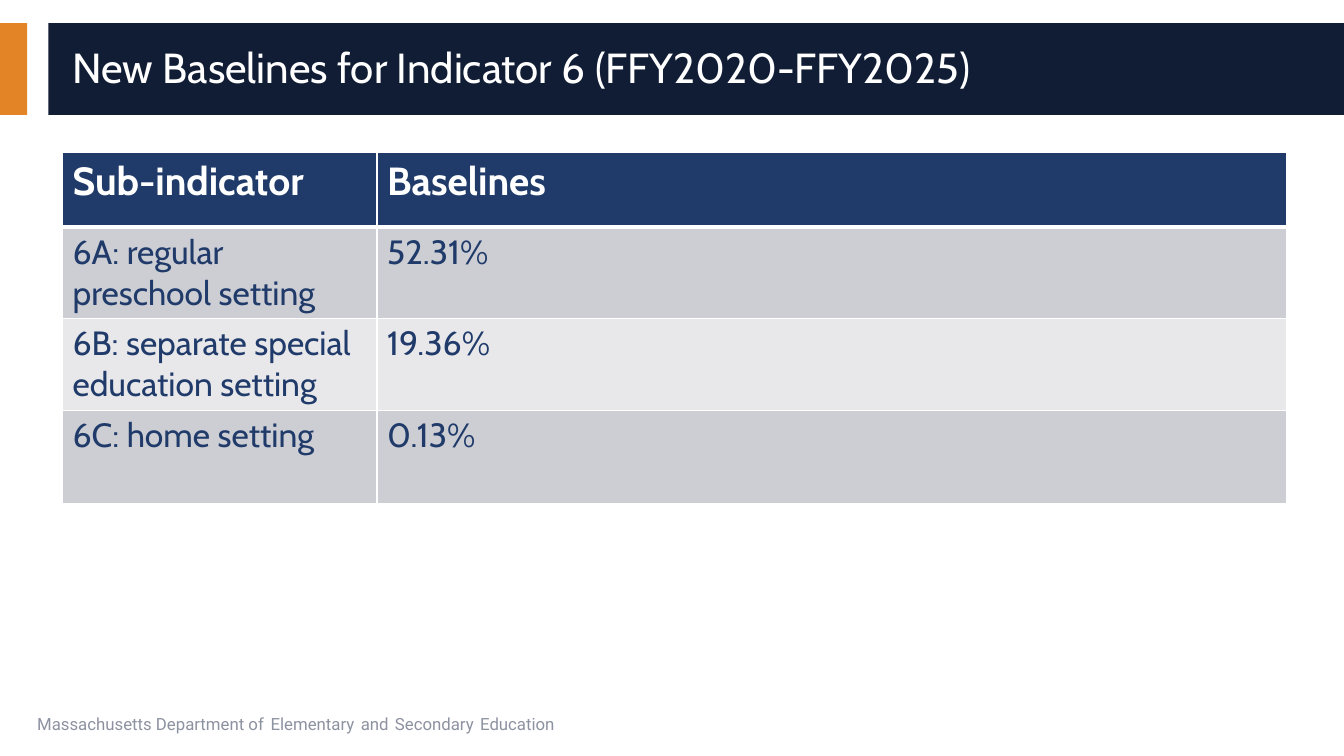
from lxml.etree import SubElement
from pptx import Presentation
from pptx.dml.color import RGBColor
from pptx.enum.shapes import MSO_SHAPE
from pptx.enum.text import MSO_ANCHOR
from pptx.oxml.ns import qn
from pptx.util import Inches, Pt

COLORS = {
    "orange": "E38526", "navy": "101D35", "blue": "203B6A", "white": "FFFFFF",
    "gray": "8D92A1", "dark band": "CDCED4", "light band": "E8E8EB",
}


def add_span(para, text, size, color, font="Cabin", bold=False):
    span = para.add_run()
    span.text = text
    span.font.size = Pt(size)
    span.font.name = font
    span.font.bold = bold
    span.font.color.rgb = RGBColor.from_string(COLORS[color])


def add_border(cell, side, width):
    """Draw one white side of a cell: lnL, lnR, lnT or lnB, in that order."""
    line = SubElement(cell._tc.get_or_add_tcPr(), qn(f"a:{side}"), w=str(Pt(width)))
    fill = SubElement(line, qn("a:solidFill"))
    SubElement(fill, qn("a:srgbClr"), val=COLORS["white"])


deck = Presentation()
deck.slide_width, deck.slide_height = Inches(13.33), Inches(7.5)
page = deck.slides.add_slide(deck.slide_layouts[6])

# Header band
for left, width, color in [(0, 0.27, "orange"), (0.48, 12.85, "navy")]:
    bar = page.shapes.add_shape(
        MSO_SHAPE.RECTANGLE, Inches(left), Inches(0.23), Inches(width), Inches(0.91))
    bar.shadow.inherit = False
    bar.fill.solid()
    bar.fill.fore_color.rgb = RGBColor.from_string(COLORS[color])
    bar.line.fill.background()

# Footer: the words after the first phrase are set apart by larger spaces
footer = page.shapes.add_textbox(Inches(0.27), Inches(6.95), Inches(8.44), Inches(0.4))
footer.text_frame.word_wrap = True
footer_para = footer.text_frame.paragraphs[0]
add_span(footer_para, "Massachusetts Department of", 12, "gray", font="Roboto")
for word in ["Elementary", "and", "Secondary", "Education"]:
    add_span(footer_para, " ", 18, "blue", font="Roboto")
    add_span(footer_para, word, 12, "gray", font="Roboto")

# Title
title = page.shapes.add_textbox(Inches(0.62), Inches(0.32), Inches(12.44), Inches(0.74))
title.text_frame.word_wrap = True
title.text_frame.vertical_anchor = MSO_ANCHOR.MIDDLE
title_para = title.text_frame.paragraphs[0]
title_para.line_spacing = 0.9
add_span(title_para, "New Baselines for Indicator 6 (FFY2020-FFY2025)", 30, "white")

# Baselines table
ROWS = [
    ("Sub-indicator", "Baselines"),
    ("6A: regular preschool setting", "52.31%"),
    ("6B: separate special education setting", "19.36%"),
    ("6C: home setting", "0.13%"),
]
ROW_HEIGHTS = [0.74, 0.91, 0.91, 0.93]
COLUMN_WIDTHS = [3.12, 9.02]
table = page.shapes.add_table(
    len(ROWS), len(COLUMN_WIDTHS), Inches(0.62), Inches(1.51),
    Inches(sum(COLUMN_WIDTHS)), Inches(sum(ROW_HEIGHTS))).table
for column, width in zip(table.columns, COLUMN_WIDTHS):
    column.width = Inches(width)

for row_index, (texts, height) in enumerate(zip(ROWS, ROW_HEIGHTS)):
    table.rows[row_index].height = Inches(height)
    is_header = row_index == 0
    band = "blue" if is_header else "dark band" if row_index % 2 else "light band"
    for column_index, text in enumerate(texts):
        cell = table.cell(row_index, column_index)
        add_span(cell.text_frame.paragraphs[0], text, 28 if is_header else 24,
                 "white" if is_header else "blue", bold=is_header)
        for side in ["lnL", "lnR", "lnT", "lnB"]:
            thick = (row_index, side) in [(0, "lnB"), (1, "lnT")]
            add_border(cell, side, 3 if thick else 1)
        cell.fill.solid()
        cell.fill.fore_color.rgb = RGBColor.from_string(COLORS[band])

deck.save("out.pptx")
